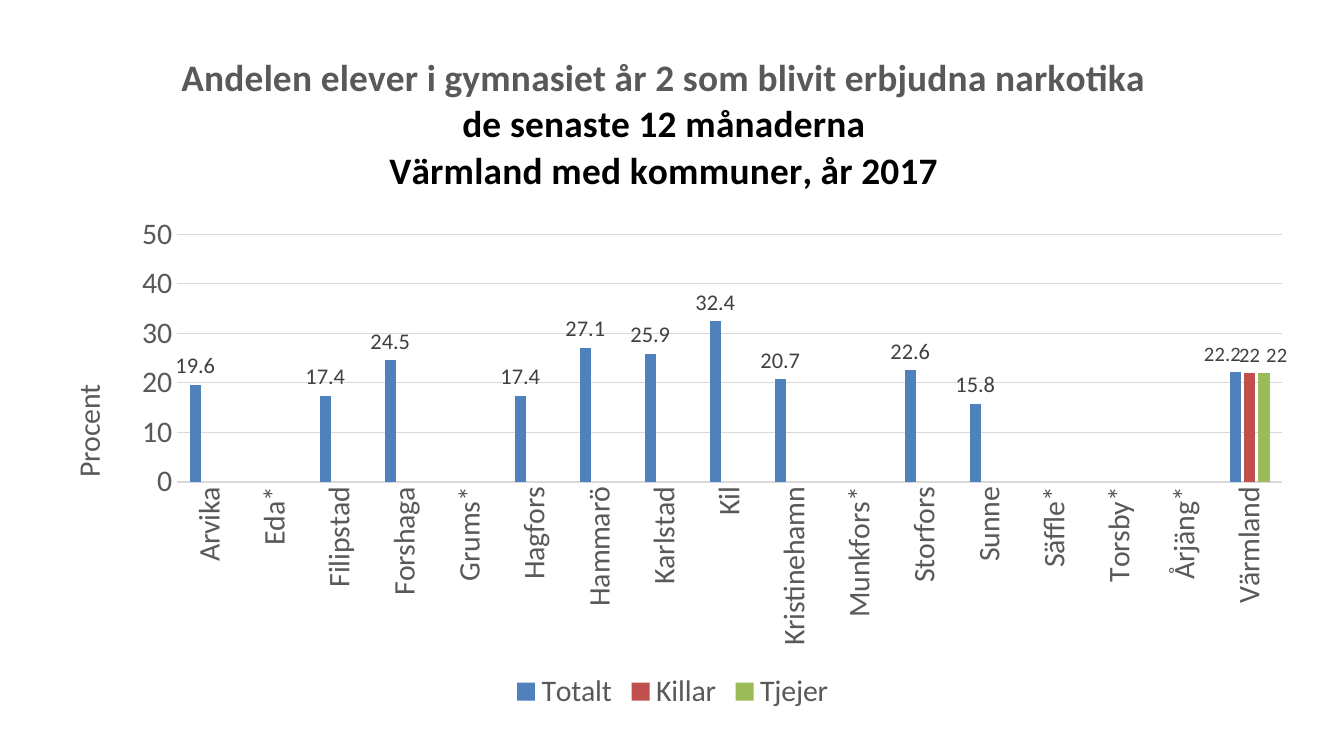
import pptx
import pptx.chart.data
import pptx.dml.color
import pptx.enum.chart
import pptx.oxml
import pptx.oxml.ns
import pptx.util

WIDTH = 10
HEIGHT = WIDTH * 9 / 16
FONT = "Calibri"
COLOURS = {
    "black": "000000", "text": "595959", "label": "404040", "rule": "D9D9D9",
    "Totalt": "4F81BD", "Killar": "C0504D", "Tjejer": "9BBB59",
}
TITLE = [
    ("Andelen elever i gymnasiet år 2 som blivit erbjudna narkotika", "text"),
    ("de senaste 12 månaderna", "black"),
    ("Värmland med kommuner, år 2017", "black"),
]
TOTALS = {
    "Arvika": 19.6, "Eda*": None, "Filipstad": 17.4, "Forshaga": 24.5,
    "Grums*": None, "Hagfors": 17.4, "Hammarö": 27.1, "Karlstad": 25.9,
    "Kil": 32.4, "Kristinehamn": 20.7, "Munkfors*": None, "Storfors": 22.6,
    "Sunne": 15.8, "Säffle*": None, "Torsby*": None, "Årjäng*": None,
    "Värmland": 22.2,
}
LAST = len(TOTALS) - 1
SERIES = {
    "Totalt": list(TOTALS.values()),
    "Killar": [None] * LAST + [22],
    "Tjejer": [None] * LAST + [22],
}
LABEL_SIZES = {"Totalt": 12, "Killar": 11, "Tjejer": 11}
LABEL_SHIFTS = {"Totalt": -0.01, "Tjejer": 0.01}


def colour(name):
    return pptx.dml.color.RGBColor.from_string(COLOURS[name])


def format_font(font, size=16, color="text", bold=False):
    font.name, font.size, font.bold = FONT, pptx.util.Pt(size), bold
    font.color.rgb = colour(color)


def add_text(paragraph, text, **formatting):
    run = paragraph.add_run()
    run.text = text
    format_font(run.font, **formatting)


def format_rule(line):
    line.color.rgb = colour("rule")
    line.width = pptx.util.Pt(0.75)


def set_layout(parent, index, modes=(), **shares):
    """Place a chart part by shares of the chart's size."""
    for old in parent.findall(pptx.oxml.ns.qn("c:layout")):
        parent.remove(old)
    tags = [f'<c:{tag} val="{value}"/>' for tag, value in modes]
    tags += [f'<c:{tag} val="{value}"/>' for tag, value in shares.items()]
    parent.insert(index, pptx.oxml.parse_xml(
        f'<c:layout {pptx.oxml.ns.nsdecls("c")}><c:manualLayout>'
        f'{"".join(tags)}</c:manualLayout></c:layout>'))


def turn_upright(element):
    body = element.find(".//" + pptx.oxml.ns.qn("a:bodyPr"))
    body.set("rot", "-5400000")
    body.set("vert", "horz")


def format_titles(chart):
    edges = [("xMode", "edge"), ("yMode", "edge")]
    chart.has_title = True
    frame = chart.chart_title.text_frame
    for number, (text, color) in enumerate(TITLE):
        paragraph = frame.add_paragraph() if number else frame.paragraphs[0]
        add_text(paragraph, text, size=20, color=color, bold=True)
    chart.chart_title.include_in_layout = False
    set_layout(chart.chart_title.element, 1, edges, x=0.11, y=0.03)

    axis_title = chart.value_axis.axis_title
    add_text(axis_title.text_frame.paragraphs[0], "Procent")
    turn_upright(axis_title.element)
    set_layout(axis_title.element, 1, edges, x=0.02, y=0.51)


def format_axes(chart):
    for axis in (chart.category_axis, chart.value_axis):
        axis.major_tick_mark = pptx.enum.chart.XL_TICK_MARK.NONE
        axis.minor_tick_mark = pptx.enum.chart.XL_TICK_MARK.NONE
        format_font(axis.tick_labels.font)
    format_rule(chart.category_axis.format.line)
    category_element = chart.element.find(".//" + pptx.oxml.ns.qn("c:catAx"))
    turn_upright(category_element.find(pptx.oxml.ns.qn("c:txPr")))

    axis = chart.value_axis
    axis.minimum_scale, axis.maximum_scale, axis.major_unit = 0, 50, 10
    axis.format.line.fill.background()
    axis.has_major_gridlines = True
    format_rule(axis.major_gridlines.format.line)


def format_series(chart):
    outside = pptx.enum.chart.XL_LABEL_POSITION.OUTSIDE_END
    plot = chart.plots[0]
    plot.gap_width, plot.overlap, plot.vary_by_categories = 219, -27, False
    for series in plot.series:
        series.format.fill.solid()
        series.format.fill.fore_color.rgb = colour(series.name)
        labels = series.data_labels
        labels.show_value, labels.position = True, outside
        format_font(labels.font, size=LABEL_SIZES[series.name], color="label")
        # The county's outer labels are moved apart
        if series.name in LABEL_SHIFTS:
            label = series.points[LAST].data_label
            format_font(label.font, size=11, color="label")
            label.position = outside
            element = chart.element.findall(".//" + pptx.oxml.ns.qn("c:ser"))[series.index]
            set_layout(element.find(".//" + pptx.oxml.ns.qn("c:dLbl")), 1,
                       x=LABEL_SHIFTS[series.name], y=0)


def add_column_chart(slide, left, top, width, height):
    data = pptx.chart.data.CategoryChartData()
    data.categories = list(TOTALS)
    for name, values in SERIES.items():
        data.add_series(name, values)
    box = [pptx.util.Inches(length) for length in (left, top, width, height)]
    chart = slide.shapes.add_chart(
        pptx.enum.chart.XL_CHART_TYPE.COLUMN_CLUSTERED, *box, data).chart
    format_font(chart.font, color="black")
    format_titles(chart)
    format_axes(chart)
    format_series(chart)

    # Plot area
    plot_area = chart.element.find(".//" + pptx.oxml.ns.qn("c:plotArea"))
    modes = [("layoutTarget", "inner"), ("xMode", "edge"), ("yMode", "edge")]
    set_layout(plot_area, 0, modes, x=0.11, y=0.3, w=0.87, h=0.36)

    # Legend
    chart.has_legend = True
    chart.legend.position = pptx.enum.chart.XL_LEGEND_POSITION.BOTTOM
    chart.legend.include_in_layout = False
    format_font(chart.legend.font)


def main():
    presentation = pptx.Presentation()
    presentation.slide_width = pptx.util.Inches(WIDTH)
    presentation.slide_height = pptx.util.Inches(HEIGHT)
    slide = presentation.slides.add_slide(presentation.slide_layouts[6])
    # Margins of the chart as shares of the slide
    add_column_chart(slide, 0.028 * WIDTH, 0.037 * HEIGHT,
                     0.945 * WIDTH, 0.91 * HEIGHT)
    presentation.save("out.pptx")


if __name__ == "__main__":
    main()
